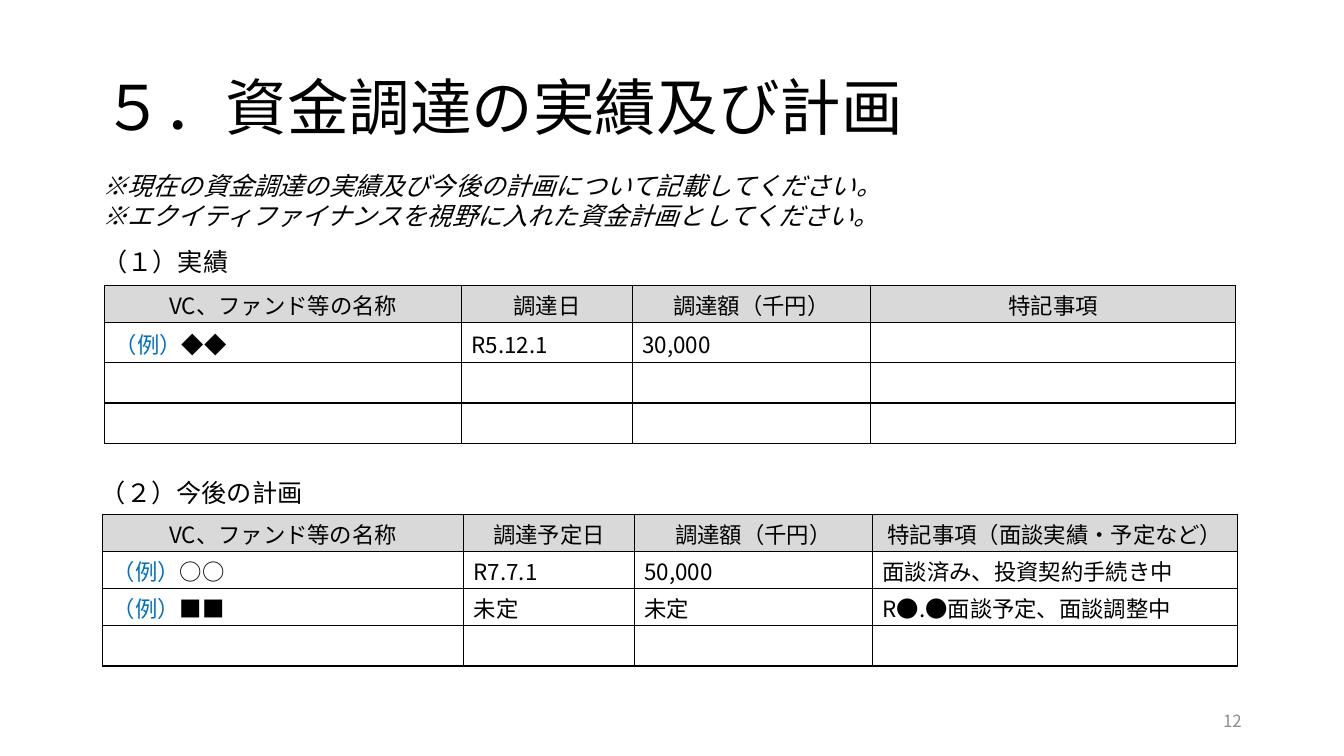
from dataclasses import dataclass

from lxml import etree
from pptx import Presentation
from pptx import util as u
from pptx.dml.color import RGBColor
from pptx.enum import text as t
from pptx.oxml import ns

Pt = u.Pt
FONT = "Noto Sans CJK JP"
BLACK = RGBColor(0x00, 0x00, 0x00)
BLUE = RGBColor(0x00, 0x70, 0xC0)
GRAY = RGBColor(0x8C, 0x8C, 0x8C)
SHADE = RGBColor(0xD9, 0xD9, 0xD9)
MARK = "（例）"
ROW = 26.4
LEFT, MID, RIGHT = t.PP_ALIGN.LEFT, t.PP_ALIGN.CENTER, t.PP_ALIGN.RIGHT


@dataclass
class Label:
    text: str
    left: float
    top: float
    width: float
    height: float
    size: float = 18
    color: RGBColor = BLACK
    slant: bool = False
    align: t.PP_ALIGN = LEFT
    anchor: t.MSO_ANCHOR = t.MSO_ANCHOR.TOP
    pitch: float | u.Length = Pt(21.6)
    inset: tuple[float, float] = (5.4, 1.8)


@dataclass
class Grid:
    left: float
    top: float
    widths: list[float]
    rows: list[list[str]]


HEAD = "VC、ファンド等の名称"
SUM = "調達額（千円）"
EMPTY = [""] * 4

LABELS = [
    Label("５．資金調達の実績及び計画", 66, 28.75, 828, 104.4, size=44,
          anchor=t.MSO_ANCHOR.MIDDLE, pitch=0.9, inset=(3.6, 8)),
    Label("※現在の資金調達の実績及び今後の計画について記載してください。\n"
          "※エクイティファイナンスを視野に入れた資金計画としてください。",
          66, 115.9, 702, 50.9, slant=True),
    Label("（１）実績", 66, 170.6, 828, 29.1),
    Label("（２）今後の計画", 65, 335.5, 828, 29.1),
    Label("12", 678, 500.5, 216, 28.75, size=12, color=GRAY, align=RIGHT,
          anchor=t.MSO_ANCHOR.MIDDLE, pitch=1.0, inset=(3.6, 3.6)),
]

GRIDS = [
    Grid(74.9, 203.8, [254.9, 121.9, 170.2, 260.9], [
        [HEAD, "調達日", SUM, "特記事項"],
        [MARK + "◆◆", "R5.12.1", "30,000", ""],
        EMPTY,
        EMPTY,
    ]),
    Grid(73.4, 367.7, [257.8, 121.9, 170.2, 260.9], [
        [HEAD, "調達予定日", SUM, "特記事項（面談実績・予定など）"],
        [MARK + "○○", "R7.7.1", "50,000", "面談済み、投資契約手続き中"],
        [MARK + "■■", "未定", "未定", "R●.●面談予定、面談調整中"],
        EMPTY,
    ]),
]


def style(run, size: float, color: RGBColor, slant: bool = False) -> None:
    font = run.font
    font.size = Pt(size)
    font.name = FONT
    font.italic = slant
    font.color.rgb = color
    east = etree.SubElement(font._element, ns.qn("a:ea"))
    east.set("typeface", FONT)


def draw_label(slide, item: Label) -> None:
    box = slide.shapes.add_textbox(
        Pt(item.left), Pt(item.top), Pt(item.width), Pt(item.height))
    frame = box.text_frame
    frame.word_wrap = True
    frame.vertical_anchor = item.anchor
    frame.margin_top, frame.margin_bottom = map(Pt, item.inset)
    frame.text = item.text
    for para in frame.paragraphs:
        para.alignment = item.align
        para.line_spacing = item.pitch
        for run in para.runs:
            style(run, item.size, item.color, item.slant)


def add_edge(cell) -> None:
    props = cell._tc.get_or_add_tcPr()
    for spot, side in enumerate(("lnL", "lnR", "lnT", "lnB")):
        line = etree.Element(ns.qn("a:" + side), w=str(Pt(1)))
        fill = etree.SubElement(line, ns.qn("a:solidFill"))
        etree.SubElement(fill, ns.qn("a:srgbClr"), val=str(BLACK))
        props.insert(spot, line)


def fill_cell(cell, words: str, head: bool) -> None:
    cell.vertical_anchor = t.MSO_ANCHOR.MIDDLE
    cell.margin_top, cell.margin_bottom = Pt(6.2), Pt(1)
    if head:
        cell.fill.solid()
        cell.fill.fore_color.rgb = SHADE
    else:
        cell.fill.background()
    add_edge(cell)
    para = cell.text_frame.paragraphs[0]
    para.alignment = MID if head else LEFT
    para.line_spacing = Pt(19.2)
    if words.startswith(MARK):
        para.text = MARK
        style(para.runs[0], 16, BLUE)
        rest = para.add_run()
        rest.text = words.removeprefix(MARK)
        style(rest, 16, BLACK)
    elif words:
        para.text = words
        style(para.runs[0], 16, BLACK)


def draw_grid(slide, grid: Grid) -> None:
    count = len(grid.rows)
    table = slide.shapes.add_table(
        count, len(grid.widths), Pt(grid.left), Pt(grid.top),
        Pt(sum(grid.widths)), Pt(ROW * count)).table
    table.horz_banding = False
    table.first_row = False
    for col, width in zip(table.columns, grid.widths):
        col.width = Pt(width)
    for y, row in enumerate(grid.rows):
        table.rows[y].height = Pt(ROW)
        for x, words in enumerate(row):
            fill_cell(table.cell(y, x), words, y == 0)


def main() -> None:
    deck = Presentation()
    deck.slide_width, deck.slide_height = Pt(960), Pt(540)
    slide = deck.slides.add_slide(deck.slide_layouts[6])
    for item in LABELS:
        draw_label(slide, item)
    for grid in GRIDS:
        draw_grid(slide, grid)
    deck.save("out.pptx")


if __name__ == "__main__":
    main()
